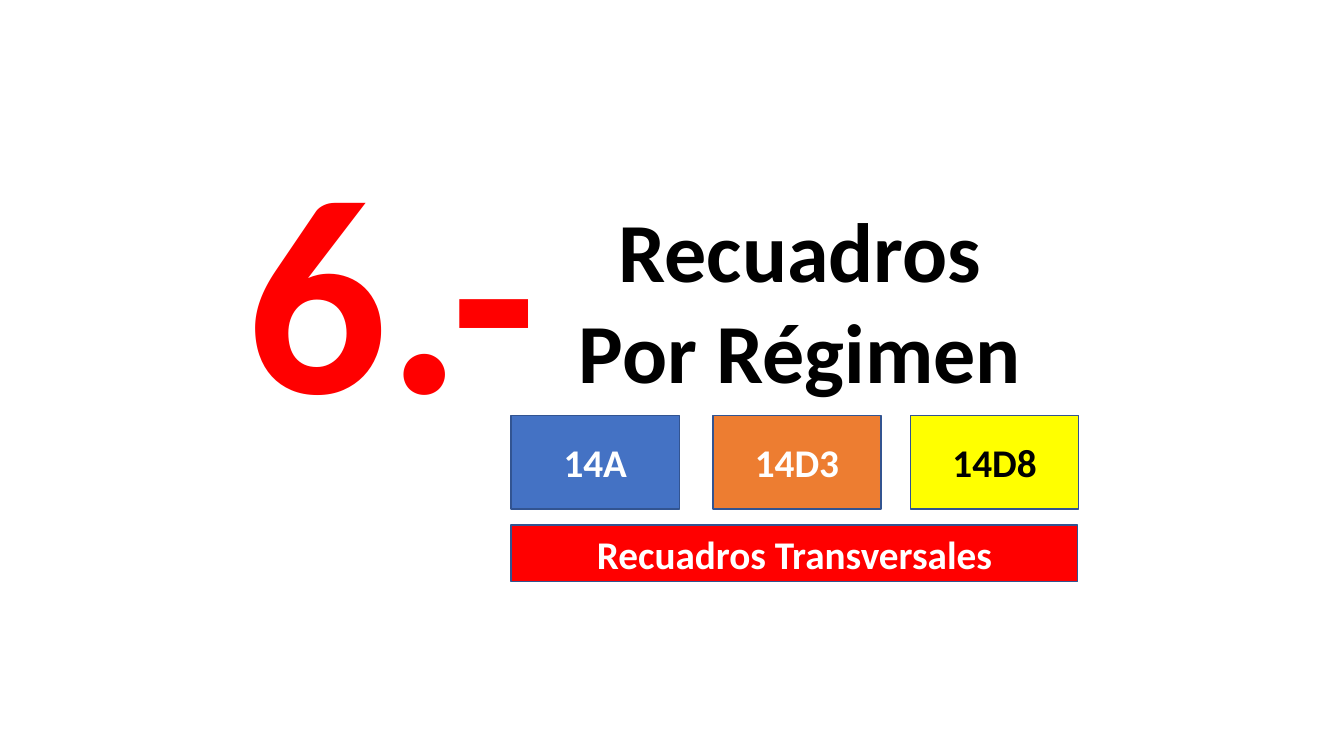
from pptx import Presentation
from pptx.dml.color import RGBColor
from pptx.enum.shapes import MSO_SHAPE
from pptx.enum.text import MSO_ANCHOR, MSO_AUTO_SIZE, PP_ALIGN
from pptx.util import Inches, Pt

WIDTH, HEIGHT = Inches(13.33), Inches(7.5)
FONT = "Calibri"
BLACK = RGBColor(0x00, 0x00, 0x00)
WHITE = RGBColor(0xFF, 0xFF, 0xFF)
RED = RGBColor(0xFF, 0x00, 0x00)
BLUE = RGBColor(0x44, 0x72, 0xC4)
ORANGE = RGBColor(0xED, 0x7D, 0x31)
YELLOW = RGBColor(0xFF, 0xFF, 0x00)
OUTLINE = RGBColor(0x32, 0x54, 0x91)

REGIMES = [
    ("14A", 38.03, BLUE, WHITE),
    ("14D3", 53.04, ORANGE, WHITE),
    ("14D8", 67.74, YELLOW, BLACK),
]


def area(left, top, width, height):
    """Turn percentages of the slide's size into lengths."""
    return (int(WIDTH * left / 100), int(HEIGHT * top / 100),
            int(WIDTH * width / 100), int(HEIGHT * height / 100))


def write(box, text, size, color, align, anchor):
    """Write one bold run into a wrapping text frame."""
    frame = box.text_frame
    frame.word_wrap = True
    frame.auto_size = MSO_AUTO_SIZE.NONE
    frame.vertical_anchor = anchor
    para = frame.paragraphs[0]
    para.alignment = align
    span = para.add_run()
    span.text = text
    span.font.name = FONT
    span.font.size = Pt(size)
    span.font.bold = True
    span.font.color.rgb = color


def set_title(page, text, place):
    """Move and format the title placeholder."""
    title = page.shapes.title
    title.left, title.top, title.width, title.height = place
    write(title, text, 60, BLACK, PP_ALIGN.CENTER, MSO_ANCHOR.TOP)


def add_number(page, text, place):
    """Add the large section number."""
    box = page.shapes.add_textbox(*place)
    write(box, text, 199, RED, PP_ALIGN.LEFT, MSO_ANCHOR.TOP)


def add_label(page, text, place, fill, color):
    """Add a filled rectangle with a centred label."""
    box = page.shapes.add_shape(MSO_SHAPE.RECTANGLE, *place)
    box.shadow.inherit = False
    box.fill.solid()
    box.fill.fore_color.rgb = fill
    box.line.color.rgb = OUTLINE
    box.line.width = Pt(1)
    write(box, text, 28, color, PP_ALIGN.CENTER, MSO_ANCHOR.MIDDLE)


def main():
    """Build the section slide and save it."""
    deck = Presentation()
    deck.slide_width, deck.slide_height = WIDTH, HEIGHT
    page = deck.slides.add_slide(deck.slide_layouts[5])
    add_number(page, "6.-", area(17.63, 14.53, 24.61, 46))
    set_title(page, "Recuadros Por Régimen", area(41.56, 25.6, 35.93, 28.27))
    for text, left, fill, color in REGIMES:
        add_label(page, text, area(left, 54.93, 12.53, 12.4), fill, color)
    add_label(page, "Recuadros Transversales",
              area(38.03, 69.47, 42.16, 7.47), RED, WHITE)
    deck.save("out.pptx")


if __name__ == "__main__":
    main()
